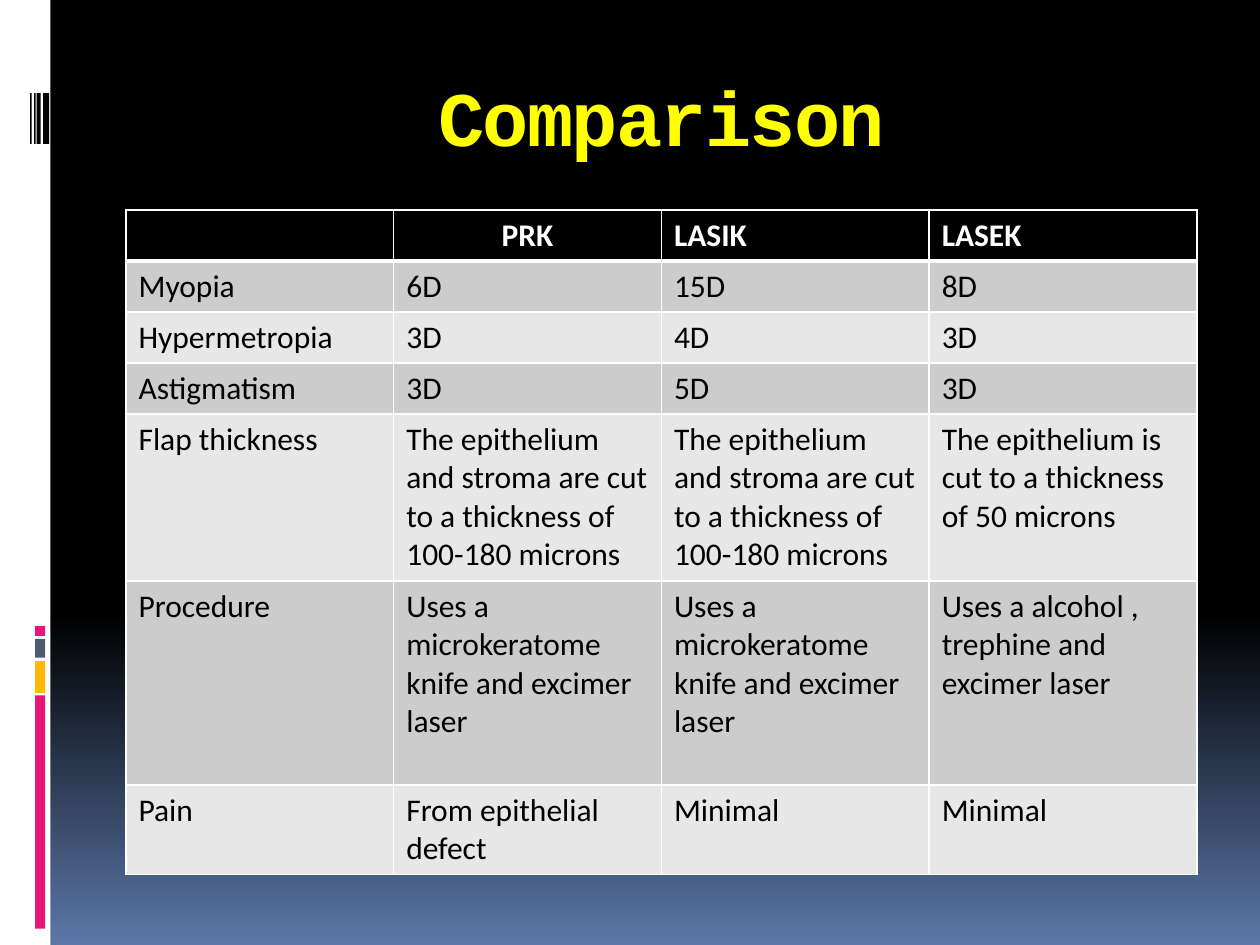
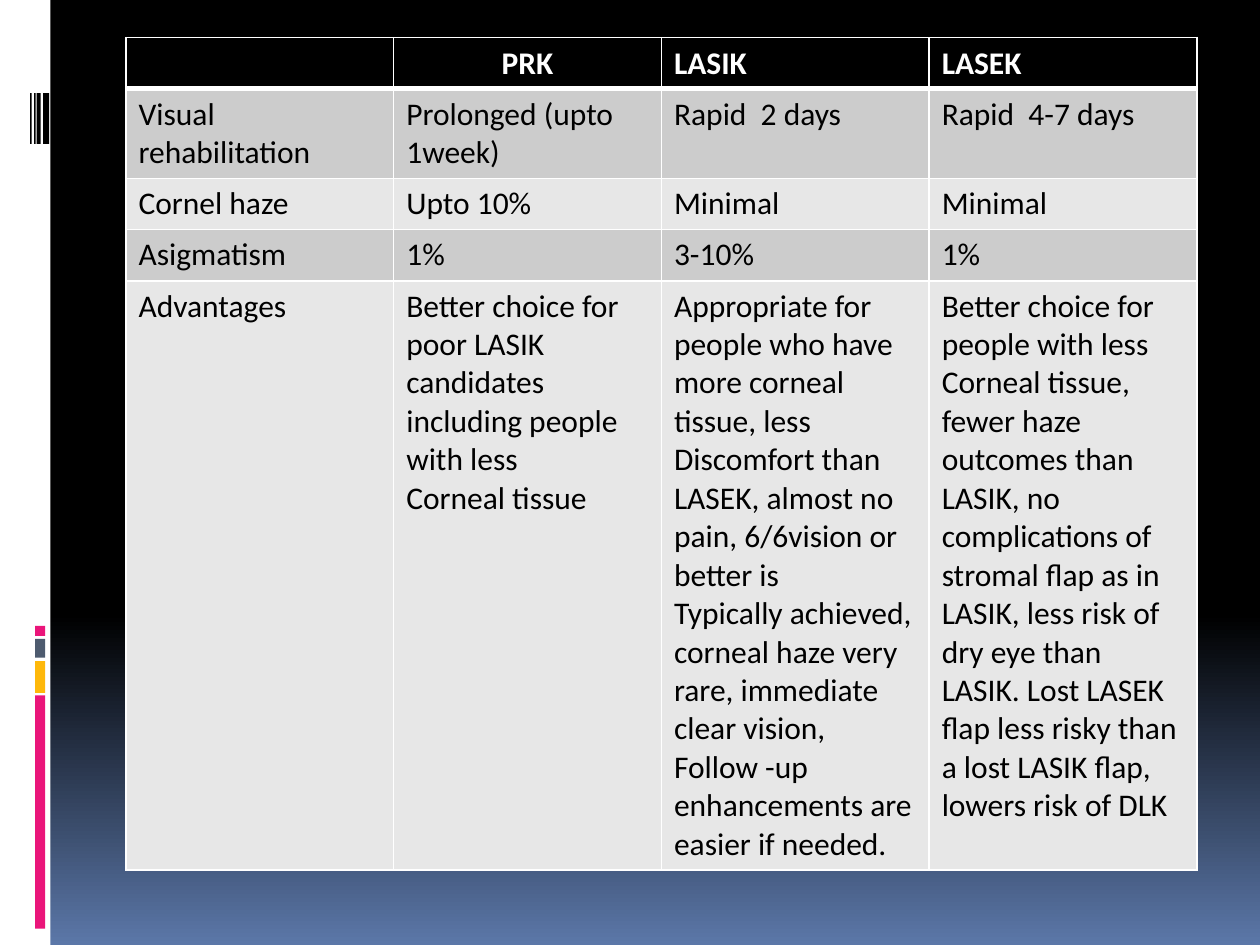
from copy import deepcopy

from lxml.etree import SubElement
from pptx import Presentation
from pptx.dml.color import RGBColor
from pptx.enum.shapes import MSO_SHAPE
from pptx.enum.text import MSO_ANCHOR, PP_ALIGN
from pptx.oxml.ns import qn
from pptx.util import Cm, Pt

COLORS = {
    "white": "FFFFFF",
    "black": "000000",
    "sky": "5B77A8",
    "pink": "EA157A",
    "amber": "FEB80A",
    "slate": "4E5B6F",
    "yellow": "FFFF00",
    "dark_row": "CCCCCC",
    "light_row": "E7E7E7",
}
GRADIENT = [(0, "black"), (0.65, "black"), (1, "sky")]
COLOR_BLOCKS = [
    (14.02, 4.7, "pink"),
    (13.33, 0.64, "amber"),
    (12.88, 0.38, "slate"),
    (12.62, 0.2, "pink"),
]
BARCODE_STRIPES = [(0.87, 0.12), (0.74, 0.08), (0.69, 0.03), (0.61, 0.03)]

PROCEDURES = ["", "PRK", "LASIK", "LASEK"]
STROMAL_CUT = "The epithelium and stroma are cut to a thickness of 100-180 microns"
KNIFE_AND_LASER = "Uses a microkeratome knife and excimer laser"
LIMITS_AND_METHOD = [
    PROCEDURES,
    ["Myopia", "6D", "15D", "8D"],
    ["Hypermetropia", "3D", "4D", "3D"],
    ["Astigmatism", "3D", "5D", "3D"],
    ["Flap thickness", STROMAL_CUT, STROMAL_CUT,
     "The epithelium is cut to a thickness of 50 microns"],
    ["Procedure", KNIFE_AND_LASER, KNIFE_AND_LASER,
     "Uses a alcohol , trephine and excimer laser"],
    ["Pain", "From epithelial defect", "Minimal", "Minimal"],
]
RECOVERY_AND_BENEFITS = [
    PROCEDURES,
    ["Visual rehabilitation", "Prolonged (upto 1week)", "Rapid  2 days", "Rapid  4-7 days"],
    ["Cornel haze", "Upto 10%", "Minimal", "Minimal"],
    ["Asigmatism", "1%", "3-10%", "1%"],
    ["Advantages",
     "Better choice for poor LASIK candidates including people with less\n"
     "Corneal tissue",
     "Appropriate for people who have more corneal tissue, less\n"
     "Discomfort than LASEK, almost no pain, 6/6vision or better is\n"
     "Typically achieved, corneal haze very rare, immediate clear vision,\n"
     "Follow -up enhancements are easier if needed.",
     "Better choice for people with less\n"
     "Corneal tissue, fewer haze outcomes than LASIK, no complications of stromal flap as in\n"
     "LASIK, less risk of dry eye than LASIK. Lost LASEK flap less risky than a lost LASIK flap, "
     "lowers risk of DLK"],
]


def color(name):
    return RGBColor.from_string(COLORS[name])


class DeckBuilder:
    title_font = "Courier New"
    body_font = "Calibri"
    left = 2.54
    width = 21.59
    line_row = 1.03

    def __init__(self):
        self.deck = Presentation()
        self.deck.slide_width = Cm(25.4)
        self.deck.slide_height = Cm(19.05)
        self.page = None

    def add_page(self):
        self.page = self.deck.slides.add_slide(self.deck.slide_layouts[6])
        self.paint_background()
        self.add_bar(0, 0, 1.02, 19.05, "white")
        for top, height, name in COLOR_BLOCKS:
            self.add_bar(0.71, top, 0.2, height, name)
        for left, width in BARCODE_STRIPES:
            self.add_bar(left, 1.88, width, 1.02, "black")

    def paint_background(self):
        fill = self.page.background.fill
        fill.gradient()
        fill.gradient_angle = 270
        stop_list = self.page.element.find(".//" + qn("a:gsLst"))
        stop_list.insert(1, deepcopy(stop_list[0]))
        for stop, (position, name) in zip(fill.gradient_stops, GRADIENT):
            stop.position = position
            stop.color.rgb = color(name)

    def add_bar(self, left, top, width, height, name):
        bar = self.page.shapes.add_shape(
            MSO_SHAPE.RECTANGLE, Cm(left), Cm(top), Cm(width), Cm(height))
        bar.shadow.inherit = False
        bar.fill.solid()
        bar.fill.fore_color.rgb = color(name)
        bar.line.fill.background()

    def add_span(self, para, text, font, size, name, bold):
        span = para.add_run()
        span.text = text
        span.font.name = font
        span.font.size = Pt(size)
        span.font.bold = bold
        span.font.color.rgb = color(name)
        return span

    def add_title(self, text):
        box = self.page.shapes.add_textbox(Cm(self.left), Cm(1.07), Cm(self.width), Cm(2.54))
        frame = box.text_frame
        frame.word_wrap = True
        frame.vertical_anchor = MSO_ANCHOR.MIDDLE
        para = frame.paragraphs[0]
        para.alignment = PP_ALIGN.CENTER
        span = self.add_span(para, text, self.title_font, 44, "yellow", True)
        span.font._element.set("spc", "-100")

    def add_table(self, top, rows, tall_rows):
        heights = [tall_rows.get(index, self.line_row) for index in range(len(rows))]
        columns = len(rows[0])
        table = self.page.shapes.add_table(
            len(rows), columns, Cm(self.left), Cm(top), Cm(self.width), Cm(sum(heights))).table
        table.horz_banding = False
        for column in table.columns:
            column.width = Cm(self.width / columns)
        for row_index, texts in enumerate(rows):
            table.rows[row_index].height = Cm(heights[row_index])
            for column_index, text in enumerate(texts):
                self.fill_cell(table.cell(row_index, column_index), text, row_index)

    def fill_cell(self, cell, text, row_index):
        header = row_index == 0
        cell.fill.solid()
        band = "dark_row" if row_index % 2 else "light_row"
        cell.fill.fore_color.rgb = color("black" if header else band)
        self.add_borders(cell, top=3 if row_index == 1 else 1, bottom=3 if header else 1)
        if not text:
            return
        frame = cell.text_frame
        for index, line in enumerate(text.split("\n")):
            para = frame.add_paragraph() if index else frame.paragraphs[0]
            if header and text == "PRK":
                para.alignment = PP_ALIGN.CENTER
            self.add_span(para, line, self.body_font, 18,
                          "white" if header else "black", header)

    def add_borders(self, cell, top, bottom):
        properties = cell._tc.get_or_add_tcPr()
        sides = [("a:lnL", 1), ("a:lnR", 1), ("a:lnT", top), ("a:lnB", bottom)]
        for index, (tag, points) in enumerate(sides):
            border = SubElement(properties, qn(tag), w=str(Pt(points)))
            fill = SubElement(border, qn("a:solidFill"))
            SubElement(fill, qn("a:srgbClr"), val=COLORS["white"])
            properties.insert(index, border)


def main():
    builder = DeckBuilder()
    builder.add_page()
    builder.add_title("Comparison")
    builder.add_table(4.23, LIMITS_AND_METHOD, {4: 3.36, 5: 4.11, 6: 1.81})
    builder.add_page()
    builder.add_table(0.76, RECOVERY_AND_BENEFITS, {1: 1.81, 4: 11.88})
    builder.deck.save("out.pptx")


if __name__ == "__main__":
    main()
